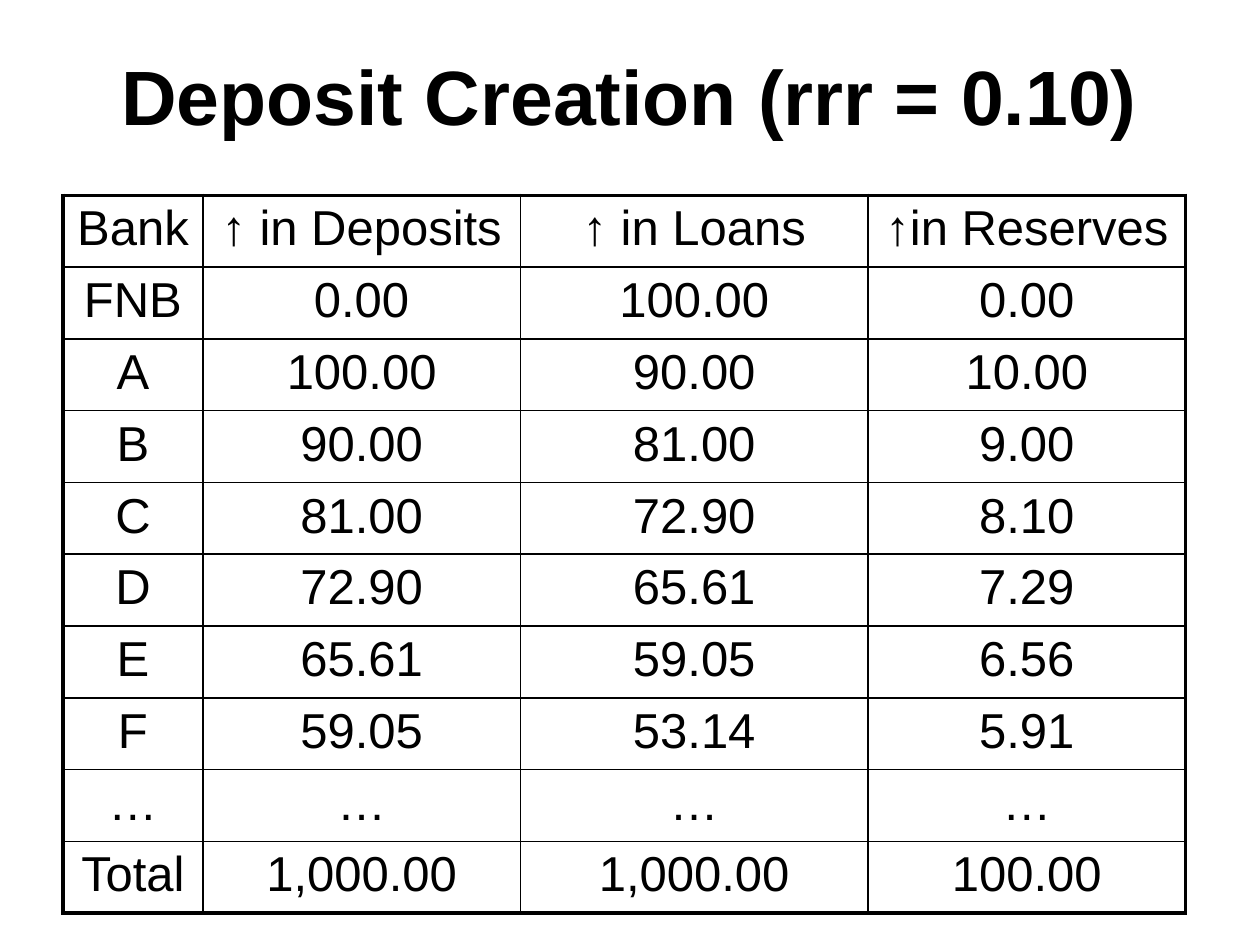
import typing

import pptx
import pptx.dml.color
import pptx.enum.text
import pptx.oxml
import pptx.oxml.ns
import pptx.util

Inches = pptx.util.Inches
Pt = pptx.util.Pt
BLACK = "000000"
THIN, THICK = 1, 2.25
TOP, HIGH = 1.55, 0.57
WIDTHS = (1.11, 2.52, 2.76, 2.52)
INSETS = {
    "margin_left": Inches(0.1),
    "margin_right": Inches(0.1),
    "margin_top": Inches(0.05),
    "margin_bottom": Inches(0.05),
}
HEAD = {"name": "Arial", "size": Pt(44), "bold": True}
BODY = {"name": "Arial", "size": Pt(28), "bold": False}


class Row(typing.NamedTuple):
    bank: str
    deposits: str
    loans: str
    reserves: str


ROWS = (
    Row("Bank", "↑ in Deposits", "↑ in Loans", "↑in Reserves"),
    Row("FNB", "0.00", "100.00", "0.00"),
    Row("A", "100.00", "90.00", "10.00"),
    Row("B", "90.00", "81.00", "9.00"),
    Row("C", "81.00", "72.90", "8.10"),
    Row("D", "72.90", "65.61", "7.29"),
    Row("E", "65.61", "59.05", "6.56"),
    Row("F", "59.05", "53.14", "5.91"),
    Row("…", "…", "…", "…"),
    Row("Total", "1,000.00", "1,000.00", "100.00"),
)


def apply(item: typing.Any, values: dict) -> None:
    for name, value in values.items():
        setattr(item, name, value)


def paint(target: typing.Any, color: str) -> None:
    target.rgb = pptx.dml.color.RGBColor.from_string(color)


def write(frame: typing.Any, text: str, style: dict) -> None:
    line = frame.paragraphs[0]
    line.text = text
    line.alignment = pptx.enum.text.PP_ALIGN.CENTER
    font = line.runs[0].font
    apply(font, style)
    paint(font.color, BLACK)


def border(cell: typing.Any, sides: dict[str, float]) -> None:
    props = cell._tc.get_or_add_tcPr()
    for side, width in sides.items():
        props.append(pptx.oxml.parse_xml(
            f'<a:ln{side} {pptx.oxml.ns.nsdecls("a")} w="{Pt(width)}">'
            f'<a:solidFill><a:srgbClr val="{BLACK}"/></a:solidFill>'
            f'</a:ln{side}>'
        ))


def add_title(slide: typing.Any, text: str) -> None:
    box = slide.shapes.add_textbox(
        Inches(0.5), Inches(0.13), Inches(9), Inches(1.25))
    frame = box.text_frame
    apply(frame, INSETS | {
        "word_wrap": True,
        "vertical_anchor": pptx.enum.text.MSO_ANCHOR.MIDDLE,
    })
    write(frame, text, HEAD)


def add_grid(slide: typing.Any, rows: tuple[Row, ...]) -> None:
    grid = slide.shapes.add_table(
        len(rows), len(WIDTHS), Inches(0.5), Inches(TOP),
        Inches(sum(WIDTHS)), Inches(HIGH * len(rows))).table
    apply(grid, {"first_row": False, "horz_banding": False})
    for col, width in zip(grid.columns, WIDTHS):
        col.width = Inches(width)

    # Thick lines run around the outside, thin ones between cells
    last_row, last_col = len(rows) - 1, len(WIDTHS) - 1
    for i, row in enumerate(rows):
        grid.rows[i].height = Inches(HIGH)
        for j, text in enumerate(row):
            cell = grid.cell(i, j)
            apply(cell, INSETS)
            write(cell.text_frame, text, BODY)
            border(cell, {
                "L": THICK if j == 0 else THIN,
                "R": THICK if j == last_col else THIN,
                "T": THICK if i == 0 else THIN,
                "B": THICK if i == last_row else THIN,
            })
            cell.fill.background()


def main() -> None:
    deck = pptx.Presentation()
    apply(deck, {"slide_width": Inches(10), "slide_height": Inches(7.5)})
    slide = deck.slides.add_slide(deck.slide_layouts[6])

    # Heading
    add_title(slide, "Deposit Creation (rrr = 0.10)")

    # Deposits, loans and reserves by bank
    add_grid(slide, ROWS)

    deck.save("out.pptx")


if __name__ == "__main__":
    main()
